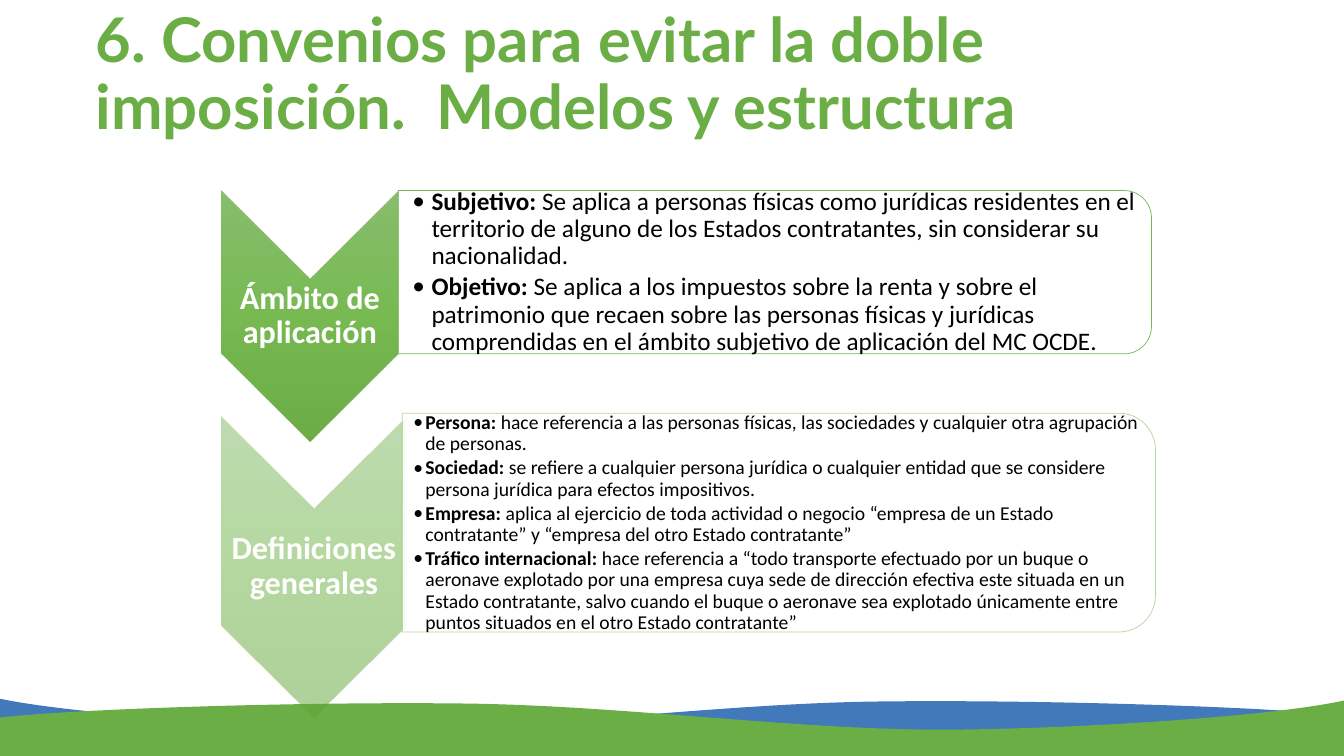
import pptx
import pptx.util
import pptx.oxml
import pptx.oxml.ns
from pptx.dml.color import RGBColor
from pptx.enum.shapes import MSO_SHAPE
from pptx.enum.text import MSO_ANCHOR, MSO_AUTO_SIZE, PP_ALIGN

Inches, Pt = pptx.util.Inches, pptx.util.Pt
qn = pptx.oxml.ns.qn
GREEN = RGBColor(0x6B, 0xAE, 0x45)
BLUE = RGBColor(0x42, 0x79, 0xBB)
WHITE = RGBColor(0xFF, 0xFF, 0xFF)
BLACK = RGBColor(0, 0, 0)
NS = pptx.oxml.ns.nsdecls("a")
GRADIENT = [(0, "7DB960"), (50, "6AB340"), (100, "5DA434")]

WAVES = [
    (BLUE, (13.33, 7.1),
     [(12.56, 7.01), (10.26, 6.94), (8.7, 6.96), (7.15, 6.98), (5.43, 7.22), (3.98, 7.22),
      (2.53, 7.21), (0.68, 7.08), (-0.01, 6.93)], [(-0.01, 7.49), (13.33, 7.5)]),
    (GREEN, (-0.01, 7.12),
     [(0.76, 7.03), (3.06, 6.96), (4.62, 6.98), (6.18, 7), (7.89, 7.24), (9.35, 7.24),
      (10.8, 7.23), (12.65, 7.1), (13.33, 6.95)], [(13.34, 7.5), (0, 7.52)]),
]

SECTIONS = [
    dict(label="Ámbito de aplicación", alpha=90, size=18, indent=0.19, inset=0.14,
         chevron=(2.2, 1.89, 1.75, 2.49), label_box=(2.2, 2.76, 1.75, 0.75),
         panel=(3.95, 1.89, 7.47, 1.62), body_box=(3.95, 1.97, 7.4, 1.46),
         items=[
             ("Subjetivo: ", "Se aplica a personas físicas como jurídicas residentes en el territorio de alguno de los Estados contratantes, sin considerar su nacionalidad."),
             ("Objetivo: ", "Se aplica a los impuestos sobre la renta y sobre el patrimonio que recaen sobre las personas físicas y jurídicas comprendidas en el ámbito subjetivo de aplicación del MC OCDE."),
         ]),
    dict(label="Definiciones generales", alpha=50, size=14, indent=0.12, inset=0.11,
         chevron=(2.2, 4.13, 1.83, 2.99), label_box=(2.2, 5.04, 1.83, 1.16),
         panel=(3.99, 4.1, 7.47, 2.17), body_box=(3.99, 4.21, 7.37, 1.96),
         items=[
             ("Persona: ", "hace referencia a las personas físicas, las sociedades y cualquier otra agrupación de personas."),
             ("Sociedad: ", "se refiere a cualquier persona jurídica o cualquier entidad que se considere persona jurídica para efectos impositivos."),
             ("Empresa: ", "aplica al ejercicio de toda actividad o negocio “empresa de un Estado contratante” y “empresa del otro Estado contratante”"),
             ("Tráfico internacional: ", "hace referencia a “todo transporte efectuado por un buque o aeronave explotado por una empresa cuya sede de dirección efectiva este situada en un Estado contratante, salvo cuando el buque o aeronave sea explotado únicamente entre puntos situados en el otro Estado contratante”"),
         ]),
]


def add_turned(s, kind, box):
    x, y, w, h = box
    sp = s.shapes.add_shape(kind, Inches(x + (w - h) / 2), Inches(y + (h - w) / 2),
                            Inches(h), Inches(w))
    sp.rotation = 90
    sp.shadow.inherit = False
    return sp


def add_text(s, box, left, inset):
    tf = s.shapes.add_textbox(*map(Inches, box)).text_frame
    tf.word_wrap = True
    tf.vertical_anchor = MSO_ANCHOR.MIDDLE
    tf.margin_left = Inches(left)
    tf.margin_right = tf.margin_top = tf.margin_bottom = Inches(inset)
    return tf


prs = pptx.Presentation()
prs.slide_width, prs.slide_height = Inches(13.33), Inches(7.5)
s = prs.slides.add_slide(prs.slide_layouts[5])

for color, start, curve, base in WAVES:
    fb = s.shapes.build_freeform(Inches(start[0]), Inches(start[1]))
    fb.add_line_segments([(Inches(x), Inches(y)) for x, y in curve + base], close=True)
    sp = fb.convert_to_shape()
    sp.shadow.inherit = False
    sp.fill.solid()
    sp.fill.fore_color.rgb = color
    sp.line.fill.background()
    lines = list(sp._element.iter(qn("a:lnTo")))
    for i in range(0, len(curve), 3):
        bezier = pptx.oxml.parse_xml(f"<a:cubicBezTo {NS}/>")
        lines[i].addprevious(bezier)
        for line in lines[i:i + 3]:
            bezier.append(line[0])
            line.getparent().remove(line)

for sec in SECTIONS:
    sp = add_turned(s, MSO_SHAPE.CHEVRON, sec["chevron"])
    sp.line.fill.background()
    stops = "".join(
        f'<a:gs pos="{pos * 1000}"><a:srgbClr val="{rgb}">'
        f'<a:alpha val="{sec["alpha"] * 1000}"/></a:srgbClr></a:gs>' for pos, rgb in GRADIENT)
    sp._element.spPr.find(qn("a:prstGeom")).addnext(pptx.oxml.parse_xml(
        f'<a:gradFill {NS} rotWithShape="0"><a:gsLst>{stops}</a:gsLst>'
        '<a:lin ang="5400000" scaled="0"/></a:gradFill>'))

    tf = add_text(s, sec["label_box"], 0.02, 0.02)
    p = tf.paragraphs[0]
    p.text = sec["label"]
    p.alignment = PP_ALIGN.CENTER
    p.line_spacing = 0.9
    p.font.name, p.font.size, p.font.bold = "Calibri", Pt(23), True
    p.font.color.rgb = WHITE

    sp = add_turned(s, MSO_SHAPE.ROUND_2_SAME_RECTANGLE, sec["panel"])
    sp.fill.solid()
    sp.fill.fore_color.rgb = WHITE
    sp.line.color.rgb = GREEN
    sp.line.width = Pt(0.5)
    for clr, alpha in zip(sp._element.spPr.iter(qn("a:srgbClr")), (90, sec["alpha"])):
        clr.append(pptx.oxml.parse_xml(f'<a:alpha {NS} val="{alpha * 1000}"/>'))

    tf = add_text(s, sec["body_box"], sec["inset"], 0.01)
    for i, (term, meaning) in enumerate(sec["items"]):
        p = tf.paragraphs[0] if i == 0 else tf.add_paragraph()
        p.level = 1
        p.line_spacing = 0.9
        p.space_after = Pt(sec["size"] * 0.15)
        p.font.name, p.font.size = "Calibri", Pt(sec["size"])
        p.font.color.rgb = BLACK
        pPr = p._p.get_or_add_pPr()
        pPr.set("marL", str(Inches(sec["indent"])))
        pPr.set("indent", str(-Inches(sec["indent"])))
        for bullet in ('buFont {} typeface="Calibri"', 'buChar {} char="•"'):
            pPr.find(qn("a:defRPr")).addprevious(
                pptx.oxml.parse_xml(f"<a:{bullet.format(NS)}/>"))
        for text, bold in ((term, True), (meaning, False)):
            r = p.add_run()
            r.text = text
            r.font.bold = bold

title = s.shapes.title
title.left, title.top, title.width, title.height = map(Inches, (0.85, 0.03, 11.5, 1.45))
tf = title.text_frame
tf.word_wrap = True
tf.auto_size = MSO_AUTO_SIZE.NONE
tf.vertical_anchor = MSO_ANCHOR.MIDDLE
p = tf.paragraphs[0]
p.text = "6. Convenios para evitar la doble imposición.  Modelos y estructura"
p.alignment = PP_ALIGN.LEFT
p.line_spacing = 0.9
p.font.name, p.font.size, p.font.bold = "Lato", Pt(44), True
p.font.color.rgb = GREEN

prs.save("out.pptx")
